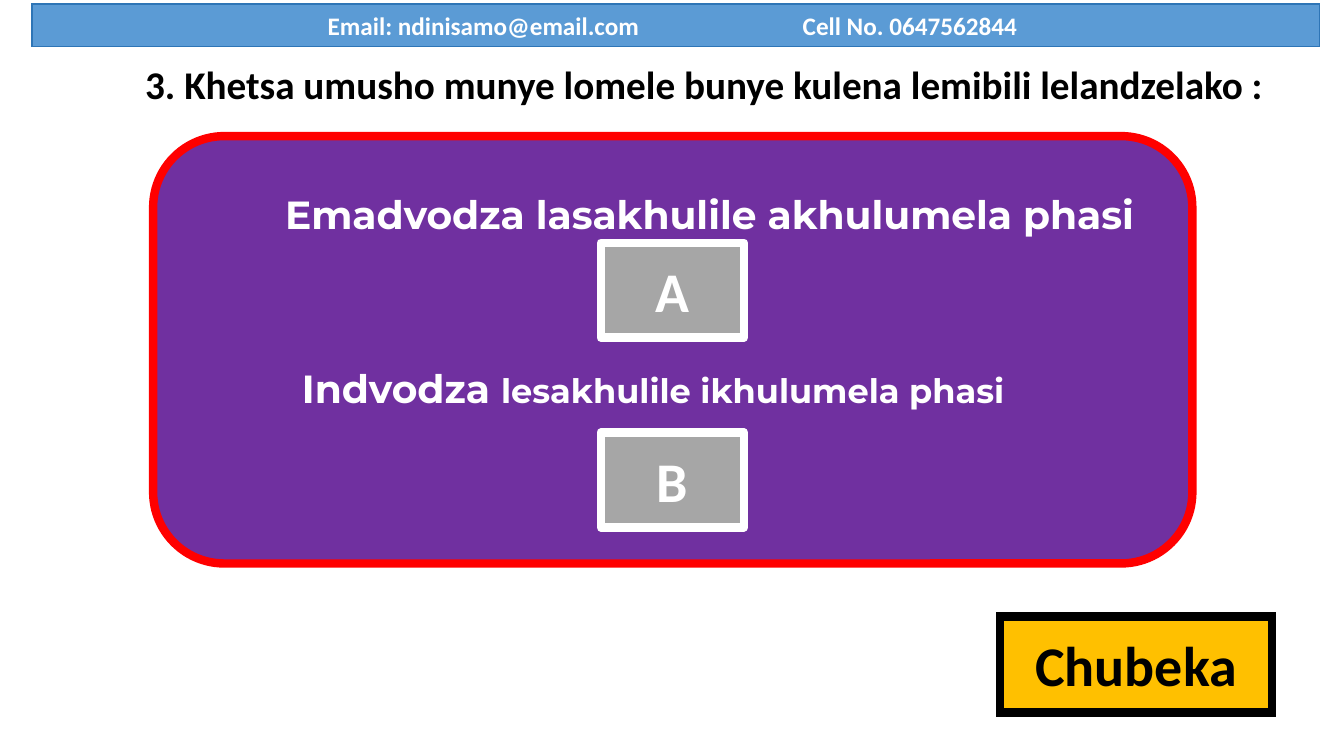
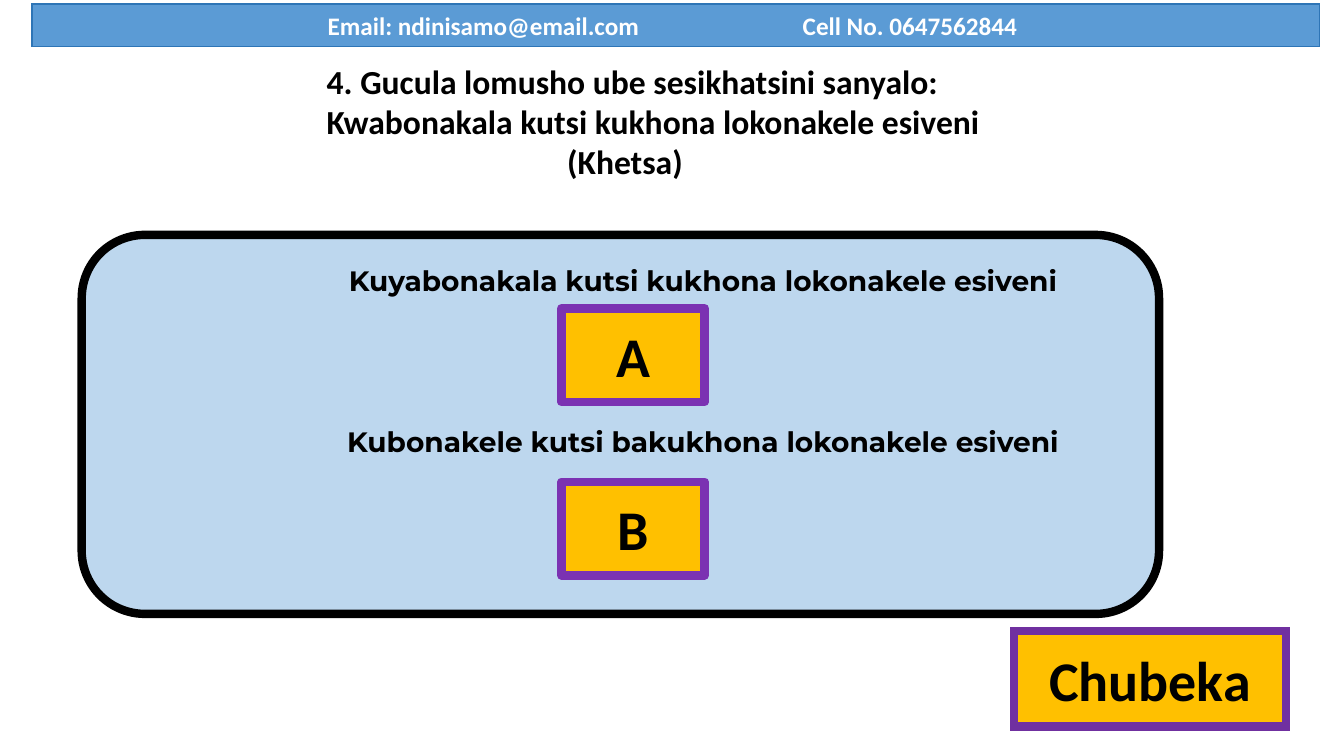
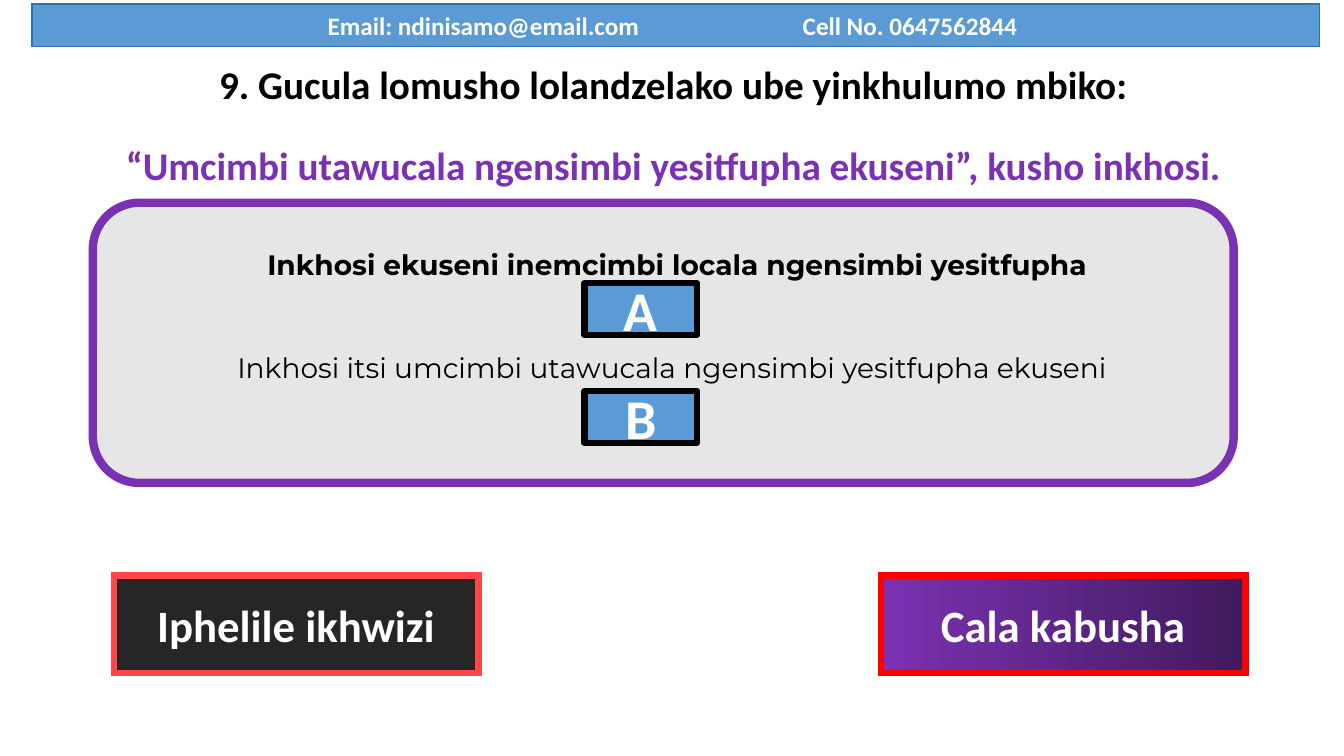
from lxml.etree import SubElement
from pptx import Presentation
from pptx.dml.color import RGBColor
from pptx.enum.shapes import MSO_SHAPE
from pptx.enum.text import MSO_ANCHOR, MSO_AUTO_SIZE, PP_ALIGN
from pptx.oxml.ns import qn
from pptx.util import Cm, Pt

HUES = {
    "white": "FFFFFF", "black": "000000", "blue": "5B9BD5", "navy": "2E75B6",
    "sky": "BDD7EE", "plum": "7030A0", "violet": "7B32B2", "dusk": "401A5D",
    "red": "FF0000", "coral": "FF4747", "gold": "FFC000", "gray": "A6A6A6",
    "pale": "E7E6E6", "coal": "262626",
}
BAND = ("Email: ndinisamo@email.com", "Cell No. 0647562844")
NEXT = (6.86, 2.41)
END = (9.19, 2.46)

SLIDES = [
    {
        "title": {
            "box": (2.9, 1.4, 29.67, 1.5), "size": 28, "align": PP_ALIGN.CENTER,
            "lines": [("3. Khetsa umusho munye lomele bunye kulena lemibili lelandzelako :", "black", 0, 0)],
        },
        "panel": ((3.86, 3.43, 26.19, 10.77), "plum", "red"),
        "ink": "white",
        "answers": [
            ((17.88, 5.38), True, [("Emadvodza lasakhulile akhulumela phasi", 28)]),
            ((16.46, 9.78), True, [("Indvodza ", 28), ("lesakhulile ikhulumela phasi", 24)]),
        ],
        "keys": {"left": 15.14, "tops": (6.12, 10.9), "size": (3.61, 2.39),
                 "look": ("gray", "white", "white"), "edge": 6},
        "links": [("Chubeka", (25.2, 15.54), NEXT, ("gold", "black", "black"), 6, 40)],
    },
    {
        "title": {
            "box": (7.98, 1.4, 22, 4), "size": 24, "align": PP_ALIGN.LEFT,
            "lines": [
                ("4. Gucula lomusho ube sesikhatsini sanyalo:", "black", 0, 0),
                ("Kwabonakala kutsi kukhona lokonakele esiveni", "black", 0, 0),
                ("(Khetsa)", "black", 0, 6.06),
            ],
        },
        "panel": ((2.06, 5.92, 27.15, 9.55), "sky", "black"),
        "ink": "black",
        "answers": [
            ((17.72, 7.06), True, [("Kuyabonakala kutsi kukhona lokonakele esiveni", 20)]),
            ((17.72, 11.11), True, [("Kubonakele kutsi bakukhona lokonakele esiveni", 20)]),
        ],
        "keys": {"left": 14.15, "tops": (7.77, 12.14), "size": (3.61, 2.36),
                 "look": ("gold", "violet", "black"), "edge": 6},
        "links": [("Chubeka", (25.55, 15.9), NEXT, ("gold", "plum", "black"), 6, 40)],
    },
    {
        "title": {
            "box": (1.35, 1.4, 31.22, 3.5), "size": 28, "align": PP_ALIGN.CENTER,
            "lines": [
                ("9. Gucula lomusho lolandzelako ube yinkhulumo mbiko:", "black", 0, 0),
                ("“Umcimbi utawucala ngensimbi yesitfupha ekuseni”, kusho inkhosi.", "violet", 24, 0),
            ],
        },
        "panel": ((2.34, 5.11, 28.75, 7.06), "pale", "violet"),
        "ink": "black",
        "answers": [
            ((17.07, 6.65), True, [("Inkhosi ekuseni inemcimbi locala ngensimbi yesitfupha", 20)]),
            ((16.94, 9.25), False, [("Inkhosi itsi umcimbi utawucala ngensimbi yesitfupha ekuseni", 20)]),
        ],
        "keys": {"left": 14.73, "tops": (7.14, 9.86), "size": (2.84, 1.3),
                 "look": ("blue", "black", "white"), "edge": 4.5},
        "links": [
            ("Cala kabusha", (22.2, 14.5), END, (("violet", "dusk"), "red", "white"), 4.5, 32),
            ("Iphelile ikhwizi", (2.87, 14.5), END, ("coal", "coral", "white"), 4.5, 32),
        ],
    },
]


def hue(name):
    return RGBColor.from_string(HUES[name])


def style(font, size, ink, bold=True, face="Calibri"):
    font.name, font.size, font.bold = face, Pt(size), bold
    font.color.rgb = hue(ink)


def draw(slide, kind, box, fill, line, edge, join="miter"):
    shape = slide.shapes.add_shape(kind, *map(Cm, box))
    shape.shadow.inherit = False
    if isinstance(fill, tuple):
        shape.fill.gradient()
        shape.fill.gradient_angle = 0
        for stop, name in zip(shape.fill.gradient_stops, fill):
            stop.color.rgb = hue(name)
    else:
        shape.fill.solid()
        shape.fill.fore_color.rgb = hue(fill)
    shape.line.color.rgb = hue(line)
    shape.line.width = Pt(edge)
    SubElement(shape.line._get_or_add_ln(), qn("a:" + join))
    return shape


def button(slide, text, box, look, edge, size, join="miter"):
    fill, line, ink = look
    shape = draw(slide, MSO_SHAPE.ACTION_BUTTON_CUSTOM, box, fill, line, edge, join)
    frame = shape.text_frame
    frame.vertical_anchor = MSO_ANCHOR.MIDDLE
    para = frame.paragraphs[0]
    para.text = text
    para.alignment = PP_ALIGN.CENTER
    style(para.font, size, ink)


def band(slide):
    shape = draw(slide, MSO_SHAPE.RECTANGLE, (0.81, 0.1, 32.44, 1.07), "blue", "navy", 1)
    frame = shape.text_frame
    frame.margin_left = Cm(7.45)
    frame.vertical_anchor = MSO_ANCHOR.MIDDLE
    para = frame.paragraphs[0]
    para.text = "\t".join(BAND)
    para.alignment = PP_ALIGN.LEFT
    style(para.font, 18, "white")
    stops = SubElement(para._p.get_or_add_pPr(), qn("a:tabLst"))
    SubElement(stops, qn("a:tab"), pos=str(Cm(11.97)), algn="l")
    props = para._p.pPr
    props.insert(0, stops)


def head(slide, data):
    title = slide.shapes.title
    title.left, title.top, title.width, title.height = map(Cm, data["box"])
    frame = title.text_frame
    frame.word_wrap = True
    frame.auto_size = MSO_AUTO_SIZE.NONE
    frame.vertical_anchor = MSO_ANCHOR.TOP
    frame.text = "\n".join(line[0] for line in data["lines"])
    for para, (_, ink, gap, dent) in zip(frame.paragraphs, data["lines"]):
        para.alignment = data["align"]
        para.line_spacing = 1.0
        para.space_before = Pt(gap)
        style(para.font, data["size"], ink)
        para._p.get_or_add_pPr().set("marL", str(Cm(dent)))


def answer(slide, mid, bold, runs, ink):
    wide, high = 25, 1.6
    box = slide.shapes.add_textbox(Cm(mid[0] - wide / 2), Cm(mid[1] - high / 2), Cm(wide), Cm(high))
    frame = box.text_frame
    frame.word_wrap = True
    frame.vertical_anchor = MSO_ANCHOR.MIDDLE
    para = frame.paragraphs[0]
    para.alignment = PP_ALIGN.CENTER
    for text, size in runs:
        run = para.add_run()
        run.text = text
        style(run.font, size, ink, bold, "Montserrat")


def main():
    deck = Presentation()
    deck.slide_width, deck.slide_height = Cm(33.87), Cm(19.05)
    for data in SLIDES:
        slide = deck.slides.add_slide(deck.slide_layouts[5])
        head(slide, data["title"])
        draw(slide, MSO_SHAPE.ROUNDED_RECTANGLE, *data["panel"], 6)
        for mid, bold, runs in data["answers"]:
            answer(slide, mid, bold, runs, data["ink"])
        keys = data["keys"]
        for text, top in zip("AB", keys["tops"]):
            button(slide, text, (keys["left"], top, *keys["size"]), keys["look"], keys["edge"], 40, "round")
        for text, spot, size, look, edge, points in data["links"]:
            button(slide, text, spot + size, look, edge, points)
        band(slide)
    deck.save("out.pptx")


if __name__ == "__main__":
    main()
